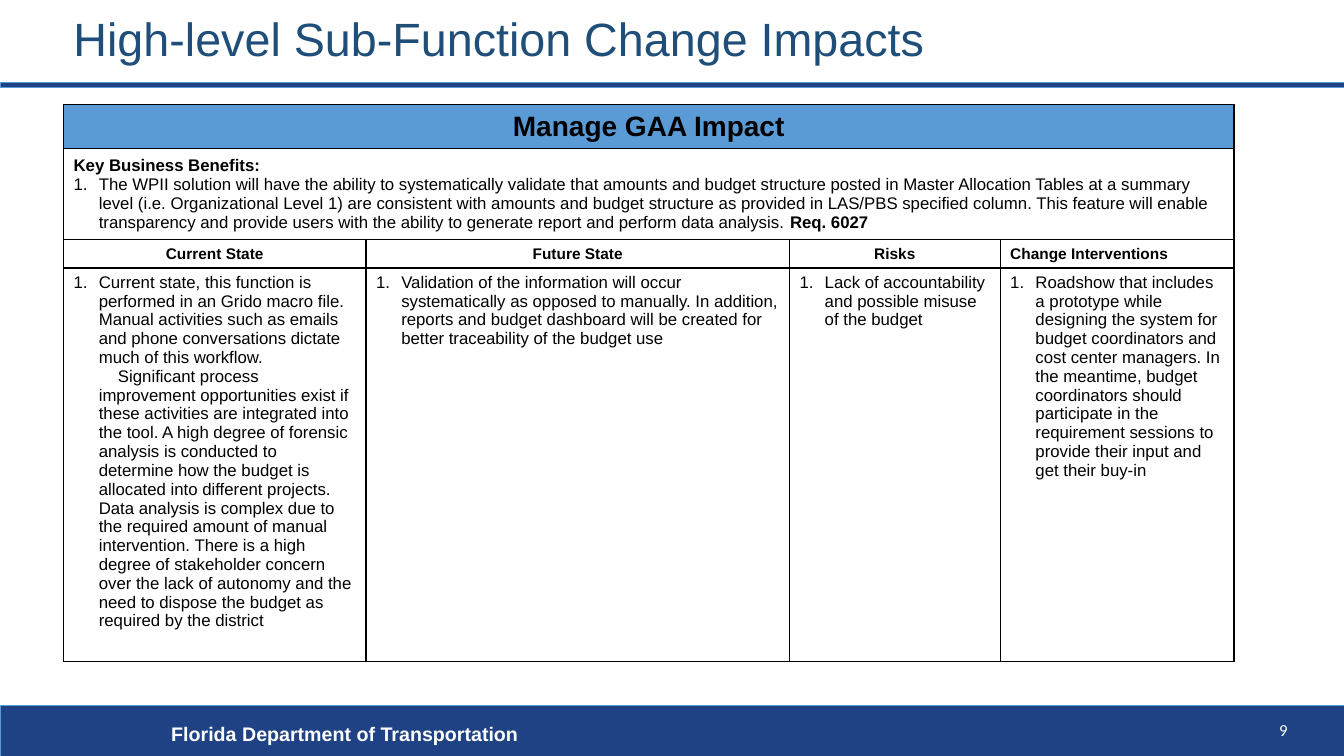
from lxml import etree
from pptx import Presentation
from pptx import util as u
from pptx.dml import color
from pptx.enum import shapes, text
from pptx.oxml import ns

COLORS = {"navy": "1F4284", "sky": "5B9BD5", "title": "1F4E79",
          "black": "000000", "white": "FFFFFF"}
LEFT, CENTER, RIGHT = text.PP_ALIGN.LEFT, text.PP_ALIGN.CENTER, text.PP_ALIGN.RIGHT
MIDDLE, TOP = text.MSO_ANCHOR.MIDDLE, text.MSO_ANCHOR.TOP


def rgb(name):
    return color.RGBColor.from_string(COLORS[name])


def write(para, spans, tint, align=LEFT, **formats):
    """Add spans of (wording, bold) to a paragraph in one format."""
    para.alignment = align
    for wording, bold in spans:
        span = para.add_run()
        span.text = wording
        span.font.color.rgb = rgb(tint)
        for name, value in {"name": "Arial", "bold": bold, **formats}.items():
            setattr(span.font, name, value)


deck = Presentation()
deck.slide_width, deck.slide_height = u.Inches(13.33), u.Inches(7.5)
page = deck.slides.add_slide(deck.slide_layouts[6])

# Footer band and rule under the title
for top, height in [(7, 0.5), (0.82, 0.05)]:
    band = page.shapes.add_shape(shapes.MSO_SHAPE.RECTANGLE, 0, u.Inches(top),
                                 deck.slide_width, u.Inches(height))
    band.shadow.inherit = False
    band.fill.solid()
    band.fill.fore_color.rgb = rgb("navy")
    band.line.color.rgb = rgb("sky")
    band.line.width = u.Pt(0.5)

# Title, footer and page number
labels = [
    ("High-level Sub-Function Change Impacts", (0.63, 0.15, 9.08, 0.56), MIDDLE, "title",
     {"size": u.Pt(33.3)}),
    ("Florida Department of Transportation", (1.6, 7.11, 7.98, 0.34), TOP, "white",
     {"size": u.Pt(14), "bold": True}),
    ("9", (11.74, 7.09, 1.13, 0.3), TOP, "white",
     {"size": u.Pt(12), "name": "Calibri", "align": RIGHT}),
]
for wording, place, anchor, tint, formats in labels:
    box = page.shapes.add_textbox(*map(u.Inches, place))
    box.text_frame.word_wrap = True
    box.text_frame.vertical_anchor = anchor
    write(box.text_frame.paragraphs[0], [(wording, False)], tint, **formats)
    if tint == "title":
        box.text_frame.paragraphs[0].line_spacing = 0.8

# Table wording: each cell lists paragraphs of (first-line indent, numbered, spans)
benefits = [
    (None, False, [("Key Business Benefits:", True)]),
    (-0.25, True, [
        ("The WPII solution will have the ability to systematically validate that amounts and "
         "budget structure posted in Master Allocation Tables at a summary level (i.e. "
         "Organizational Level 1) are consistent with amounts and budget structure as provided "
         "in LAS/PBS specified column. This feature will enable transparency and provide users "
         "with the ability to generate report and perform data analysis. ", False),
        ("Req. 6027", True)]),
]
current = [
    (-0.25, True, [
        ("Current state, this function is performed in an Grido macro file. Manual activities "
         "such as emails and phone conversations dictate much of this workflow.", False)]),
    (0.19, False, [
        ("Significant process improvement opportunities exist if these activities are integrated "
         "into the tool. A high degree of forensic analysis is conducted to determine how the "
         "budget is allocated into different projects. Data analysis is complex due to the "
         "required amount of manual intervention. There is a high degree of stakeholder concern "
         "over the lack of autonomy and the need to dispose the budget as required by the "
         "district", False)]),
]
others = [
    "Validation of the information will occur systematically as opposed to manually. In "
    "addition, reports and budget dashboard will be created for better traceability of the "
    "budget use",
    "Lack of accountability and possible misuse of the budget",
    "Roadshow that includes a prototype while designing the system for budget coordinators and "
    "cost center managers. In the meantime, budget coordinators should participate in the "
    "requirement sessions to provide their input and get their buy-in",
]
headings = ["Current State", "Future State", "Risks", "Change Interventions"]
rows = [
    [[(None, False, [("Manage GAA Impact", True)])]],
    [benefits],
    [[(None, False, [(heading, True)])] for heading in headings],
    [current] + [[(-0.25, True, [(wording, False)])] for wording in others],
]
row_formats = [(0.43, 20, MIDDLE, CENTER), (0.9, 12, MIDDLE, LEFT),
               (0.28, 11, MIDDLE, CENTER), (3.9, 12, TOP, LEFT)]
widths = [3, 4.2, 2.09, 2.32]

# Table grid
frame = page.shapes.add_table(len(rows), len(widths), u.Inches(0.63), u.Inches(1.04),
                              u.Inches(sum(widths)), u.Inches(5.51))
table = frame.table
table.first_row = table.horz_banding = False
for column, width in zip(table.columns, widths):
    column.width = u.Inches(width)
for row in (0, 1):
    table.cell(row, 0).merge(table.cell(row, 3))

# Cell fills, borders and text
for row, (height, size, anchor, align) in enumerate(row_formats):
    table.rows[row].height = u.Inches(height)
    for col in range(len(widths)):
        cell = table.cell(row, col)
        cell.vertical_anchor = anchor
        cell.fill.solid()
        cell.fill.fore_color.rgb = rgb("white" if row else "sky")
        borders = cell._tc.get_or_add_tcPr()
        for order, side in enumerate(["lnL", "lnR", "lnT", "lnB"]):
            line = etree.Element(ns.qn("a:" + side), w=str(u.Pt(1)))
            ink = etree.SubElement(line, ns.qn("a:solidFill"))
            etree.SubElement(ink, ns.qn("a:srgbClr"), val=COLORS["black"])
            borders.insert(order, line)
        if col >= len(rows[row]):
            continue
        for number, (indent, numbered, spans) in enumerate(rows[row][col]):
            content = cell.text_frame
            para = content.add_paragraph() if number else content.paragraphs[0]
            if indent is not None:
                layout = para._p.get_or_add_pPr()
                layout.set("marL", str(u.Inches(0.25)))
                layout.set("indent", str(u.Inches(indent)))
                if numbered:
                    etree.SubElement(layout, ns.qn("a:buAutoNum"), type="arabicPeriod")
            last_heading = row == 2 and col == 3
            write(para, spans, "black", LEFT if last_heading else align, size=u.Pt(size))

deck.save("out.pptx")
